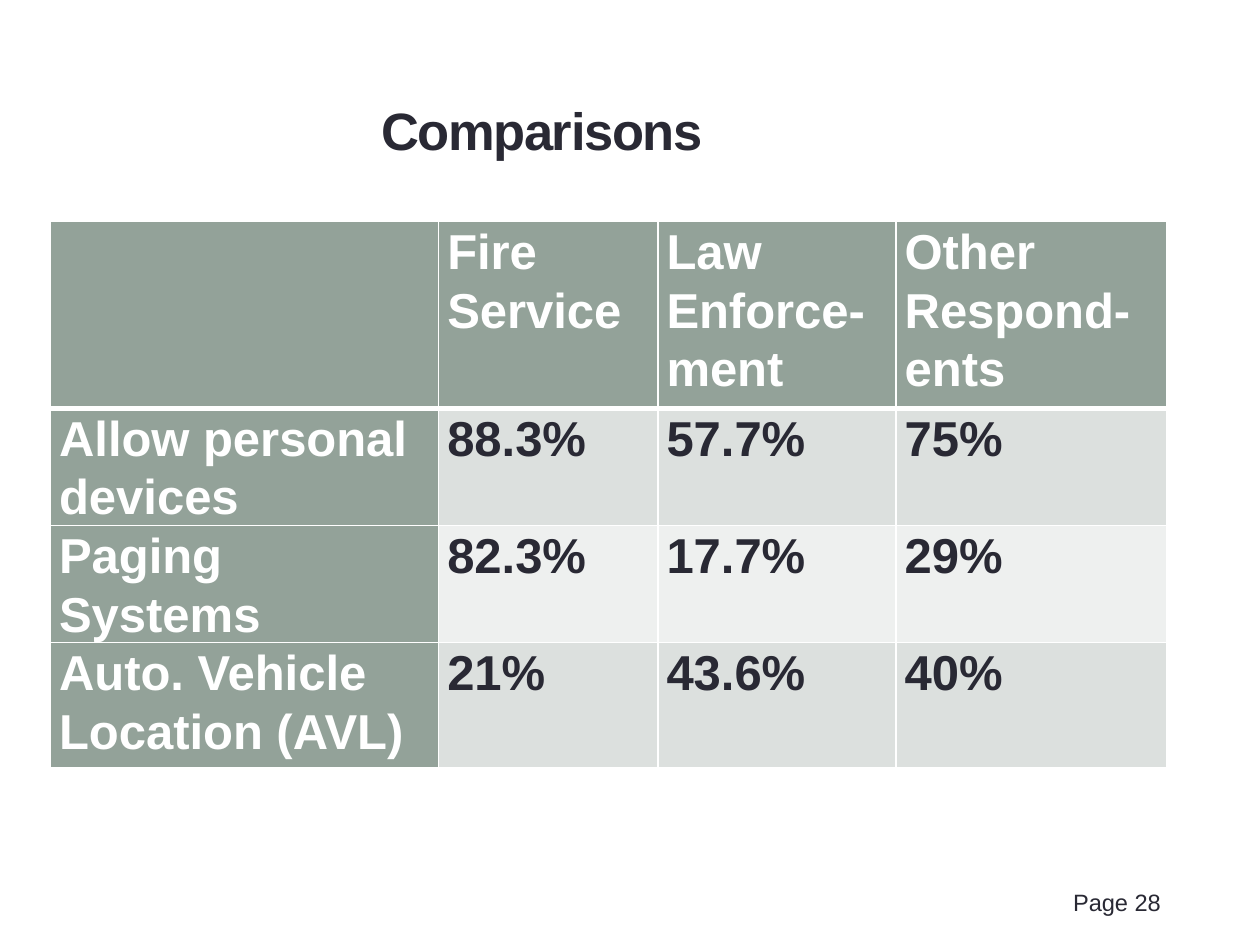
"""Build the Comparisons slide with its survey table."""
from dataclasses import dataclass

from lxml.etree import SubElement
from pptx import Presentation
from pptx.dml.color import RGBColor
from pptx.enum.text import MSO_ANCHOR, PP_ALIGN
from pptx.oxml.ns import qn
from pptx.util import Pt

DARK = RGBColor(0x29, 0x29, 0x34)
WHITE = RGBColor(0xFF, 0xFF, 0xFF)
SAGE = RGBColor(0x93, 0xA2, 0x99)
BANDS = (RGBColor(0xDC, 0xE0, 0xDE), RGBColor(0xEE, 0xF0, 0xEF))
COL_WIDTHS = (221.8, 125.3, 136.1, 154.8)


@dataclass(frozen=True)
class Row:
    height: float
    texts: tuple[str, ...]


ROWS = (
    Row(106.6, ("", "Fire Service", "Law Enforce-ment", "Other Respond-ents")),
    Row(67, ("Allow personal devices", "88.3%", "57.7%", "75%")),
    Row(67, ("Paging Systems", "82.3%", "17.7%", "29%")),
    Row(71.3, ("Auto. Vehicle Location (AVL)", "21%", "43.6%", "40%")),
)


def put_text(tf, text: str, *, size: float, color=DARK, bold=False,
             align=PP_ALIGN.LEFT, line=None, tracking=None) -> None:
    """Write one formatted paragraph into a text frame."""
    tf.word_wrap = True
    p = tf.paragraphs[0]
    p.alignment = align
    p.line_spacing = line
    r = p.add_run()
    r.text = text
    r.font.name = "Arial"
    r.font.size = Pt(size)
    r.font.bold = bold
    r.font.color.rgb = color
    if tracking is not None:
        r.font._element.set("spc", str(round(tracking * 100)))


def set_borders(cell, **widths: float) -> None:
    """Give a cell white borders of the named widths."""
    tc_pr = cell._tc.get_or_add_tcPr()
    for side, width in widths.items():
        ln = SubElement(tc_pr, qn(f"a:ln{side}"), w=str(Pt(width)))
        fill = SubElement(ln, qn("a:solidFill"))
        SubElement(fill, qn("a:srgbClr"), val=str(WHITE))


def draw_table(s, rows: tuple[Row, ...], left: float, top: float) -> None:
    """Draw the table with a header row, a header column and banded values."""
    table = s.shapes.add_table(
        len(rows), len(COL_WIDTHS), Pt(left), Pt(top),
        Pt(sum(COL_WIDTHS)), Pt(sum(row.height for row in rows))).table
    table.first_col = True
    for column, width in zip(table.columns, COL_WIDTHS):
        column.width = Pt(width)
    for i, row in enumerate(rows):
        table.rows[i].height = Pt(row.height)
        for j, text in enumerate(row.texts):
            cell = table.cell(i, j)
            header = i == 0 or j == 0
            cell.margin_left = cell.margin_right = Pt(5)
            cell.margin_top = cell.margin_bottom = Pt(0)
            set_borders(cell, L=1, R=1, T=3 if i == 1 else 1, B=3 if i == 0 else 1)
            cell.fill.solid()
            cell.fill.fore_color.rgb = SAGE if header else BANDS[(i - 1) % 2]
            if text:
                put_text(cell.text_frame, text, size=28, bold=True, line=1.07,
                         color=WHITE if header else DARK)


def main() -> None:
    """Assemble and save the slide."""
    prs = Presentation()
    prs.slide_width, prs.slide_height = Pt(720), Pt(540)
    s = prs.slides.add_slide(prs.slide_layouts[5])
    s.background.fill.solid()
    s.background.fill.fore_color.rgb = WHITE

    title = s.shapes.title
    title.left, title.top, title.width, title.height = Pt(91.5), Pt(50.4), Pt(436.3), Pt(46.8)
    title.text_frame.vertical_anchor = MSO_ANCHOR.MIDDLE
    put_text(title.text_frame, "Comparisons", size=30, bold=True,
             align=PP_ALIGN.CENTER, tracking=-0.8)

    draw_table(s, ROWS, left=28.8, top=126.7)

    page = s.shapes.add_textbox(Pt(606.2), Pt(504), Pt(90.7), Pt(26.6))
    put_text(page.text_frame, "Page 28", size=13.5)
    prs.save("out.pptx")


if __name__ == "__main__":
    main()
